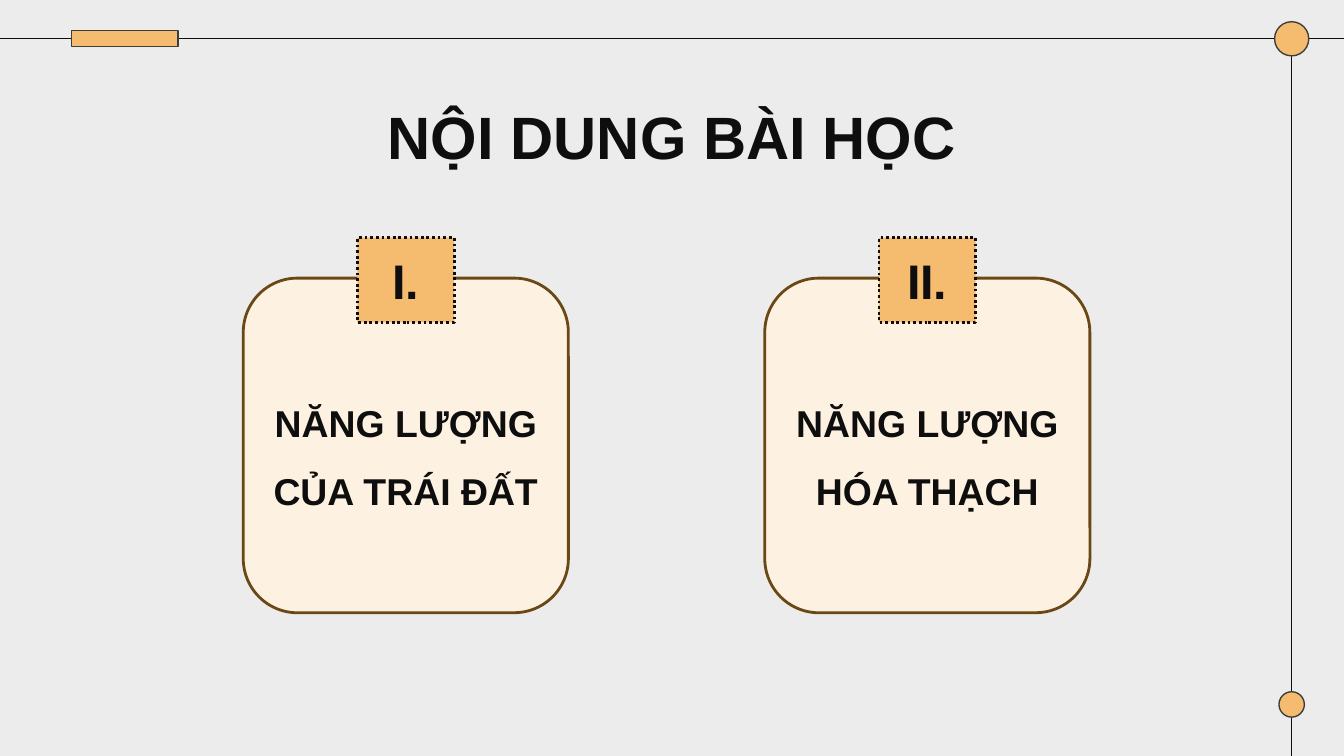
"""Build the lesson contents slide with two numbered cards."""
from lxml.etree import SubElement
from pptx import Presentation
from pptx.dml.color import RGBColor
from pptx.enum.dml import MSO_LINE
from pptx.enum.shapes import MSO_CONNECTOR, MSO_SHAPE
from pptx.enum.text import MSO_ANCHOR, PP_ALIGN
from pptx.oxml.ns import qn
from pptx.util import Pt

TITLE = "NỘI DUNG BÀI HỌC"
CARDS = [
    ("I.", "NĂNG LƯỢNG CỦA TRÁI ĐẤT"),
    ("II.", "NĂNG LƯỢNG HÓA THẠCH"),
]

INK = RGBColor(0x0E, 0x0E, 0x0E)
GREY = RGBColor(0x3D, 0x3D, 0x3D)
BROWN = RGBColor(0x6A, 0x48, 0x16)
ORANGE = RGBColor(0xF5, 0xBC, 0x6F)
CREAM = RGBColor(0xFD, 0xF2, 0xE2)
BACKGROUND = RGBColor(0xEC, 0xEC, 0xEC)

WIDTH, HEIGHT = 720, 405
RULE_Y, RULE_X = 20.8, 692
CARD_LEFT, CARD_TOP, CARD_STEP = 130.3, 149, 279.4
CARD_WIDTH, CARD_HEIGHT = 174.2, 179.3
BADGE_TOP, BADGE_WIDTH, BADGE_HEIGHT = 127.4, 51.8, 45.4

RULES = [(0, RULE_Y, WIDTH, RULE_Y), (RULE_X, RULE_Y, RULE_X, HEIGHT)]
ORNAMENTS = [
    (MSO_SHAPE.RECTANGLE, 38.2, 16.5, 57.2, 8.4),
    (MSO_SHAPE.OVAL, RULE_X - 9.15, RULE_Y - 9.15, 18.3, 18.3),
    (MSO_SHAPE.OVAL, RULE_X - 6.8, 370.6, 13.6, 13.6),
]


def add_rule(slide, *ends):
    rule = slide.shapes.add_connector(MSO_CONNECTOR.STRAIGHT, *map(Pt, ends))
    rule.line.color.rgb = INK
    rule.line.width = Pt(0.75)
    SubElement(rule._element.spPr, qn("a:effectLst"))


def add_box(slide, kind, bounds, fill, line, line_width):
    shape = slide.shapes.add_shape(kind, *map(Pt, bounds))
    shape.shadow.inherit = False
    shape.fill.solid()
    shape.fill.fore_color.rgb = fill
    shape.line.color.rgb = line
    shape.line.width = Pt(line_width)
    return shape


def write(shape, text, size, anchor=MSO_ANCHOR.MIDDLE, spacing=1.0):
    frame = shape.text_frame
    frame.word_wrap = True
    frame.vertical_anchor = anchor
    paragraph = frame.paragraphs[0]
    paragraph.alignment = PP_ALIGN.CENTER
    paragraph.line_spacing = spacing
    run = paragraph.add_run()
    run.text = text
    run.font.name = "Arial"
    run.font.size = Pt(size)
    run.font.bold = True
    run.font.color.rgb = INK


def set_margins(shape):
    frame = shape.text_frame
    frame.margin_left = frame.margin_right = Pt(7.2)
    frame.margin_top = frame.margin_bottom = Pt(7.2)


def add_card(slide, left, number, text):
    card = add_box(slide, MSO_SHAPE.ROUNDED_RECTANGLE,
                   (left, CARD_TOP, CARD_WIDTH, CARD_HEIGHT), CREAM, BROWN, 1.5)
    write(card, text, 20, spacing=1.5)
    badge_left = left + (CARD_WIDTH - BADGE_WIDTH) / 2
    badge = add_box(slide, MSO_SHAPE.RECTANGLE,
                    (badge_left, BADGE_TOP, BADGE_WIDTH, BADGE_HEIGHT), ORANGE, INK, 1.5)
    badge.line.dash_style = MSO_LINE.ROUND_DOT
    set_margins(badge)
    write(badge, number, 26)


def main():
    presentation = Presentation()
    presentation.slide_width, presentation.slide_height = Pt(WIDTH), Pt(HEIGHT)
    slide = presentation.slides.add_slide(presentation.slide_layouts[6])
    slide.background.fill.solid()
    slide.background.fill.fore_color.rgb = BACKGROUND

    for ends in RULES:
        add_rule(slide, *ends)
    for kind, *bounds in ORNAMENTS:
        add_box(slide, kind, bounds, ORANGE, GREY, 0.75)

    title = slide.shapes.add_textbox(Pt(56.7), Pt(46.1), Pt(606.6), Pt(45.4))
    set_margins(title)
    write(title, TITLE, 32, MSO_ANCHOR.TOP)

    for index, (number, text) in enumerate(CARDS):
        add_card(slide, CARD_LEFT + index * CARD_STEP, number, text)

    presentation.save("out.pptx")


if __name__ == "__main__":
    main()
